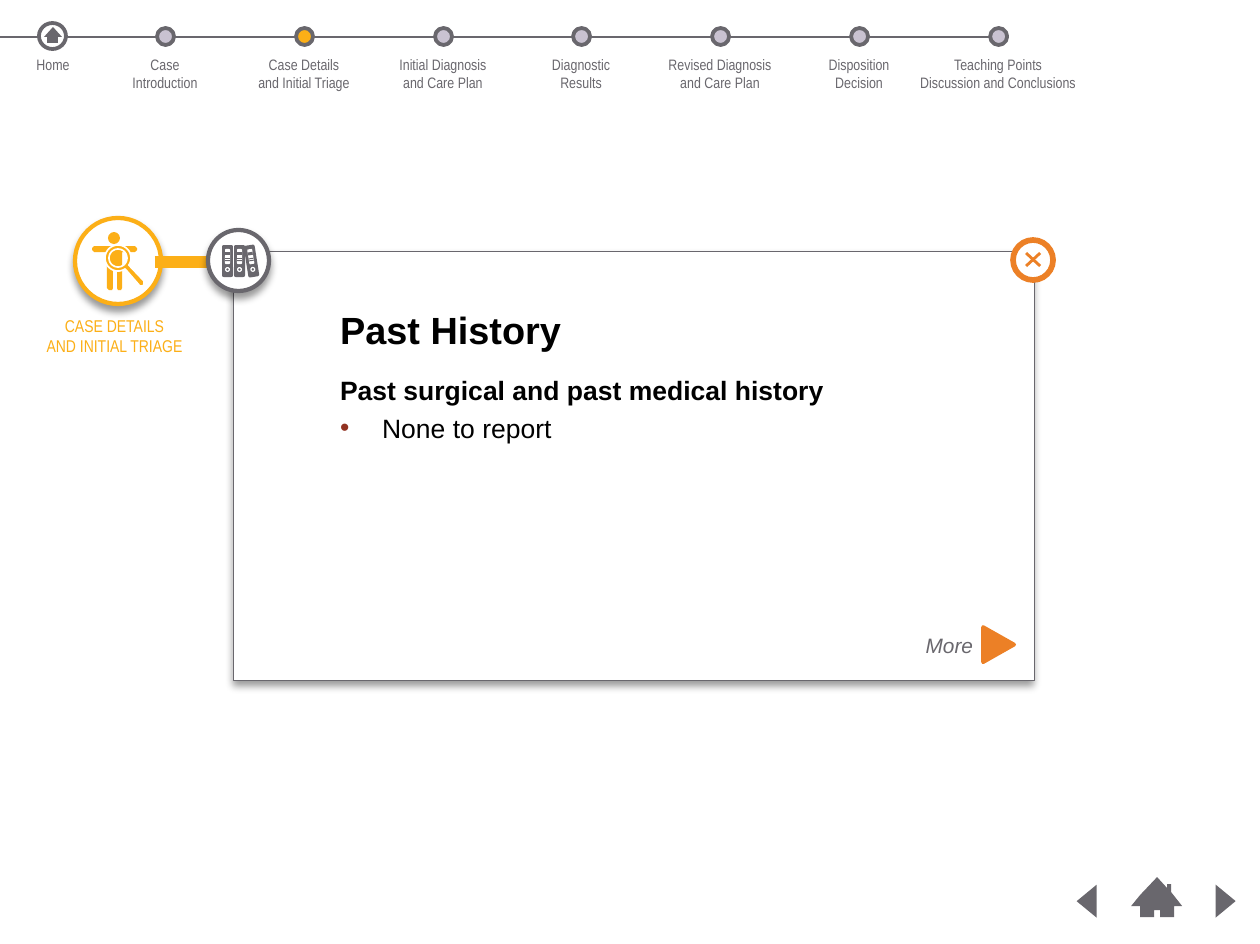
import math

import lxml.etree
import pptx
import pptx.dml.color
import pptx.enum.shapes
import pptx.enum.text
import pptx.oxml
import pptx.oxml.ns
import pptx.util

UNIT = 914400 / 136.2
GRAY, GOLD, RUST, WHITE, BLACK = "69676D", "FCAF17", "EC8026", "FFFFFF", "000000"
KIND = pptx.enum.shapes.MSO_SHAPE
ALIGN = pptx.enum.text.PP_ALIGN


def px(size):
    return pptx.util.Emu(round(size * UNIT))


def paint(target, tone):
    target.rgb = pptx.dml.color.RGBColor.from_string(tone)


def arc(x, y, size, start, stop):
    turns = [math.radians(start + (stop - start) * i / 36) for i in range(37)]
    return [(x + size * math.cos(t), y + size * math.sin(t)) for t in turns]


class Board:
    def __init__(self, slide):
        self.slide = slide
        self.shapes = slide.shapes

    def style(self, shape, fill, line=None, width=1):
        shape.shadow.inherit = False
        shape.fill.solid()
        paint(shape.fill.fore_color, fill)
        if line:
            paint(shape.line.color, line)
            shape.line.width = pptx.util.Pt(width)
        else:
            shape.line.fill.background()
        return shape

    def shape(self, kind, area, fill, line=None, width=1, turn=0, group=None):
        shapes = group.shapes if group else self.shapes
        shape = shapes.add_shape(kind, *map(px, area))
        shape.rotation = turn
        return self.style(shape, fill, line, width)

    def raised(self, *look):
        shape = self.shape(*look)
        effects = shape.element.spPr.find(pptx.oxml.ns.qn("a:effectLst"))
        effects.append(pptx.oxml.parse_xml(
            f'<a:outerShdw {pptx.oxml.ns.nsdecls("a")} blurRad="50800" dist="38100" '
            'dir="5400000" algn="t" rotWithShape="0">'
            f'<a:srgbClr val="{BLACK}"><a:alpha val="40000"/></a:srgbClr></a:outerShdw>'))

    def free(self, outlines, fill, line=None, width=1):
        outlines = [[(px(x), px(y)) for x, y in outline] for outline in outlines]
        form = self.shapes.build_freeform(*outlines[0][0])
        form.add_line_segments(outlines[0][1:])
        for outline in outlines[1:]:
            form.move_to(*outline[0])
            form.add_line_segments(outline[1:])
        self.style(form.convert_to_shape(), fill, line, width)

    def line(self, start, end, tone, width):
        straight = pptx.enum.shapes.MSO_CONNECTOR.STRAIGHT
        line = self.shapes.add_connector(straight, *map(px, start + end))
        paint(line.line.color, tone)
        line.line.width = pptx.util.Pt(width)
        lxml.etree.SubElement(line.element.spPr, pptx.oxml.ns.qn("a:effectLst"))

    def letter(self, shape, words, size, tone, face, align, inset=0):
        frame = shape.text_frame
        frame.text = words
        frame.word_wrap = True
        frame.auto_size = pptx.enum.text.MSO_AUTO_SIZE.NONE
        frame.vertical_anchor = pptx.enum.text.MSO_ANCHOR.TOP
        frame.margin_left = frame.margin_right = px(inset)
        frame.margin_top = frame.margin_bottom = px(inset)
        for part in frame.paragraphs:
            part.alignment = align
            part.space_before = pptx.util.Pt(0)
            for run in part.runs:
                run.font.size = pptx.util.Pt(size)
                run.font.name = face
                paint(run.font.color, tone)
        return frame.paragraphs

    def label(self, area, words, size=8, tone=GRAY, face="Arial Narrow", align=ALIGN.CENTER):
        box = self.shapes.add_textbox(*map(px, area))
        return self.letter(box, words, size, tone, face, align, 5)

    def holder(self, index, area, words, size):
        shape = self.slide.placeholders[index]
        shape.left, shape.top, shape.width, shape.height = map(px, area)
        shape.element.getparent().append(shape.element)
        return self.letter(shape, words, size, BLACK, "Arial", ALIGN.LEFT)

    def bullet(self, part, indent, tone=None):
        props = part._p.get_or_add_pPr()
        props.set("marL", str(px(indent)))
        props.set("indent", str(-px(indent)))
        space = pptx.oxml.ns.nsdecls("a")
        marks = [f'<a:buNone {space}/>']
        if tone:
            marks = [f'<a:buClr {space}><a:srgbClr val="{tone}"/></a:buClr>',
                     f'<a:buFont {space} typeface="Arial"/>',
                     f'<a:buChar {space} char="•"/>']
        for mark in marks:
            props.append(pptx.oxml.parse_xml(mark))

    def binder(self, x, turn=0):
        group = self.shapes.add_group_shape()
        for kind, area, fill in (
                (KIND.ROUNDED_RECTANGLE, (x, 245, 11, 32), GRAY),
                (KIND.ROUNDED_RECTANGLE, (x + 3, 249, 5, 15), WHITE),
                (KIND.RECTANGLE, (x + 3, 252, 5, 3), GRAY),
                (KIND.RECTANGLE, (x + 3, 258, 5, 1), GRAY),
                (KIND.RECTANGLE, (x + 3, 260, 5, 1), GRAY),
                (KIND.DONUT, (x + 3, 267, 5, 5), WHITE)):
            self.shape(kind, area, fill, group=group)
        group.rotation = turn


def card(board):
    board.raised(KIND.RECTANGLE, (233, 251, 801, 429), WHITE, GRAY, 0.25)
    title, = board.holder(0, (340, 307, 586, 46), "Past History", 20)
    title.runs[0].font.bold = True
    head, item = board.holder(
        1, (340, 374, 586, 220), "Past surgical and past medical history\nNone to report", 14)
    head.runs[0].font.bold = True
    head.space_after = pptx.util.Pt(3)
    board.bullet(head, 0)
    board.bullet(item, 42, "923222")

    board.shape(KIND.OVAL, (1013, 240, 40, 40), WHITE, RUST, 3)
    board.line((1026, 253), (1040, 266), RUST, 1.5)
    board.line((1040, 253), (1026, 266), RUST, 1.5)
    board.shape(KIND.ISOSCELES_TRIANGLE, (981, 629, 35, 31), RUST, RUST, 2, 90)
    more, = board.label((890, 628, 88, 36), "More", 11, GRAY, "Arial", ALIGN.RIGHT)
    more.runs[0].font.italic = True


def badge(board):
    board.raised(KIND.OVAL, (75, 218, 86, 86), WHITE, GOLD, 2.25)
    board.shape(KIND.OVAL, (108, 232, 12, 12), GOLD)
    board.free([[(94, 246), (135, 246), (137, 248), (137, 250), (135, 252), (122, 252),
                 (122, 288), (121, 290), (118, 290), (117, 288), (117, 268), (115, 267),
                 (113, 268), (113, 288), (112, 290), (109, 290), (107, 288), (107, 252),
                 (94, 252), (92, 250), (92, 248)]], GOLD)
    handle = [(144, 281), (144, 284), (143, 286), (140, 286)]
    board.free([arc(118, 258, 13, 57, 393) + handle, arc(118, 258, 9, 360, 0)],
               GOLD, WHITE, 0.88)
    board.line((155, 262), (212, 262), GOLD, 6)
    board.label((30, 310, 169, 54), "CASE DETAILS\nAND INITIAL TRIAGE", 9, GOLD)
    board.raised(KIND.OVAL, (208, 230, 61, 61), WHITE, GRAY, 2.25)
    for x, turn in ((222, 0), (234, 0), (246, -9)):
        board.binder(x, turn)


def trail(board):
    steps = ("Case\nIntroduction", "Case Details\nand Initial Triage",
             "Initial Diagnosis\nand Care Plan", "Diagnostic\nResults",
             "Revised Diagnosis\nand Care Plan", "Disposition\nDecision",
             "Teaching Points\nDiscussion and Conclusions")
    board.line((0, 37), (989, 37), GRAY, 0.75)
    for i, words in enumerate(steps):
        x = 165 + round(i * 833 / 6)
        tone = GOLD if i == 1 else "C9C2D1"
        board.shape(KIND.OVAL, (x - 8, 28, 17, 17), tone, GRAY, 2)
        board.label((x - 90, 50, 180, 48), words)
    board.shape(KIND.OVAL, (39, 23, 27, 26), WHITE, GRAY, 2)
    board.shape(KIND.ISOSCELES_TRIANGLE, (44, 27, 18, 10), GRAY)
    board.shape(KIND.RECTANGLE, (47, 36, 11, 7), GRAY)
    board.label((23, 50, 60, 28), "Home")


def pager(board):
    for x, turn in ((1070, 270), (1209, 90)):
        board.shape(KIND.ISOSCELES_TRIANGLE, (x, 891, 33, 20), GRAY, turn=turn)
    board.free([[(1157, 877), (1140, 895), (1131, 906), (1140, 906), (1140, 917),
                 (1154, 917), (1154, 910), (1160, 910), (1160, 917), (1174, 917),
                 (1174, 906), (1182, 906), (1171, 892), (1171, 884), (1167, 884),
                 (1167, 888)]], GRAY)


def main():
    deck = pptx.Presentation()
    deck.slide_width = pptx.util.Inches(9.25)
    deck.slide_height = pptx.util.Inches(6.93)
    board = Board(deck.slides.add_slide(deck.slide_layouts[1]))
    card(board)
    badge(board)
    trail(board)
    pager(board)
    deck.save("out.pptx")


if __name__ == "__main__":
    main()
